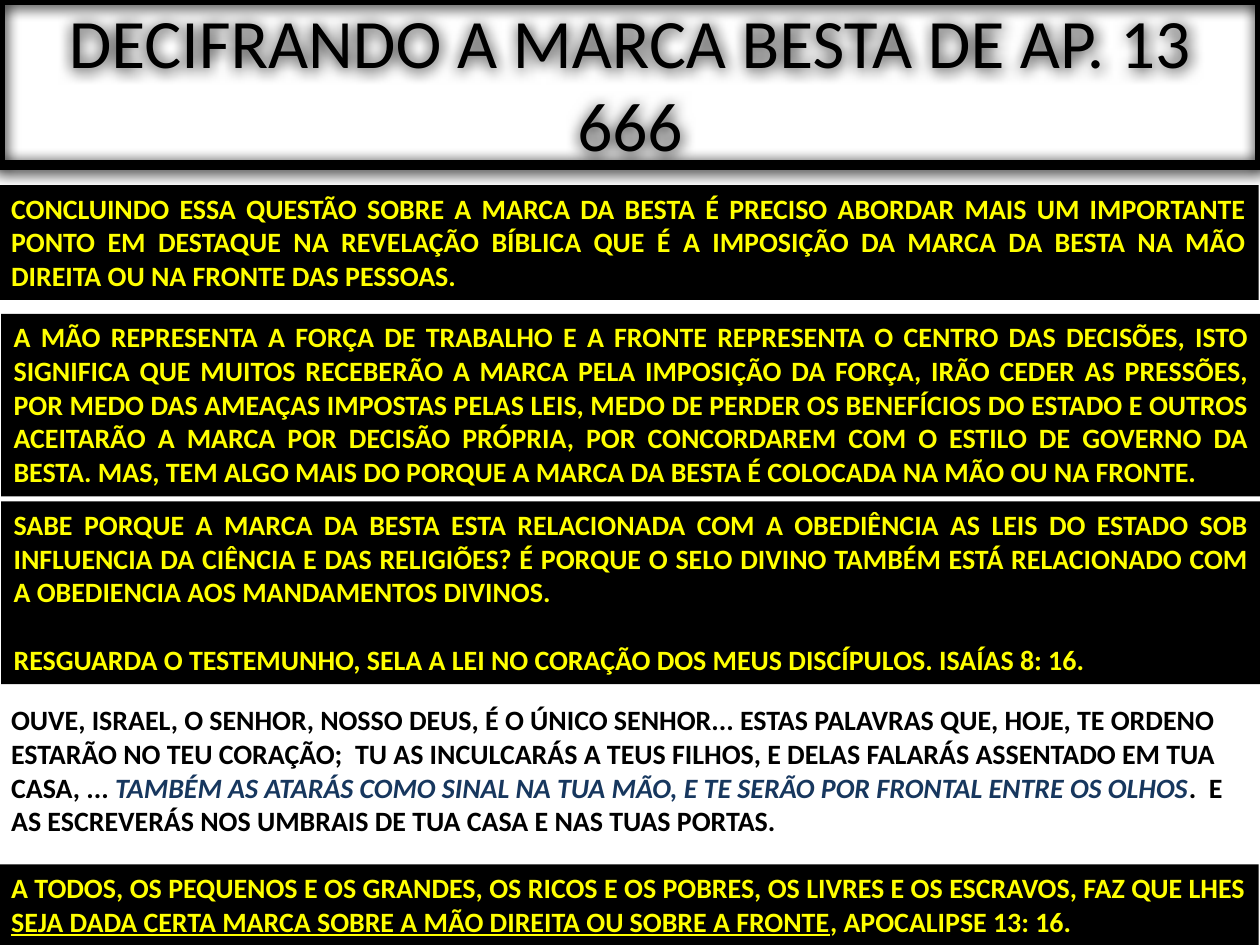
from lxml import etree
from pptx import Presentation
from pptx.dml.color import RGBColor
from pptx.enum.text import MSO_ANCHOR, MSO_AUTO_SIZE, PP_ALIGN
from pptx.oxml.ns import qn
from pptx.util import Inches, Pt

BLACK = RGBColor(0x00, 0x00, 0x00)
WHITE = RGBColor(0xFF, 0xFF, 0xFF)
YELLOW = RGBColor(0xFF, 0xFF, 0x00)
NAVY = RGBColor(0x17, 0x37, 0x5E)

# Content: a panel is a list of paragraphs, a paragraph a list of (text, format)
TITLE = "DECIFRANDO A MARCA BESTA DE AP. 13 666"
INTRO = [[("CONCLUINDO ESSA QUESTÃO SOBRE A MARCA DA BESTA É PRECISO ABORDAR MAIS UM "
           "IMPORTANTE PONTO EM DESTAQUE NA REVELAÇÃO BÍBLICA QUE É A IMPOSIÇÃO DA MARCA "
           "DA BESTA NA MÃO DIREITA OU NA FRONTE DAS PESSOAS.", {})]]
HAND = [[("A MÃO REPRESENTA A FORÇA DE TRABALHO E A FRONTE REPRESENTA O CENTRO DAS "
          "DECISÕES, ISTO SIGNIFICA QUE MUITOS RECEBERÃO A MARCA PELA IMPOSIÇÃO DA FORÇA, "
          "IRÃO CEDER AS PRESSÕES, POR MEDO DAS AMEAÇAS IMPOSTAS PELAS LEIS, MEDO DE "
          "PERDER OS BENEFÍCIOS DO ESTADO E OUTROS ACEITARÃO A MARCA POR DECISÃO PRÓPRIA, "
          "POR CONCORDAREM COM O ESTILO DE GOVERNO DA BESTA. MAS, TEM ALGO MAIS DO PORQUE "
          "A MARCA DA BESTA É COLOCADA NA MÃO OU NA FRONTE.", {})]]
SEAL = [[("SABE PORQUE A MARCA DA BESTA ESTA RELACIONADA COM A OBEDIÊNCIA AS LEIS DO "
          "ESTADO SOB INFLUENCIA DA CIÊNCIA E DAS RELIGIÕES? É PORQUE O SELO DIVINO TAMBÉM "
          "ESTÁ RELACIONADO COM A OBEDIENCIA AOS MANDAMENTOS DIVINOS.", {})],
        [("RESGUARDA O TESTEMUNHO, SELA A LEI NO CORAÇÃO DOS MEUS DISCÍPULOS. "
          "ISAÍAS 8: 16.", {})]]
HEAR = [[("OUVE, ISRAEL, O SENHOR, NOSSO DEUS, É O ÚNICO SENHOR... ESTAS PALAVRAS QUE, "
          "HOJE, TE ORDENO ESTARÃO NO TEU CORAÇÃO;  TU AS INCULCARÁS A TEUS FILHOS, E "
          "DELAS FALARÁS ASSENTADO EM TUA CASA, ... ", {}),
         ("TAMBÉM AS ATARÁS COMO SINAL NA TUA MÃO, E TE SERÃO POR FRONTAL ENTRE OS OLHOS",
          {"italic": True, "color": NAVY}),
         (".  E AS ESCREVERÁS NOS UMBRAIS DE TUA CASA E NAS TUAS PORTAS.", {})]]
MARK = [[("A TODOS, OS PEQUENOS E OS GRANDES, OS RICOS E OS POBRES, OS LIVRES E OS "
          "ESCRAVOS, FAZ QUE LHES ", {}),
         ("SEJA DADA CERTA MARCA SOBRE A MÃO DIREITA OU SOBRE A FRONTE",
          {"underline": True}),
         (", APOCALIPSE 13: 16.", {})]]

# Panel looks: fill, text colour, alignment
DARK = (BLACK, YELLOW, PP_ALIGN.JUSTIFY)
LIGHT = (WHITE, BLACK, PP_ALIGN.LEFT)

# Left, top, height, look, content
PANELS = [
    (-0.01, 1.47, 0.91, DARK, INTRO),
    (0.01, 2.49, 1.45, DARK, HAND),
    (0.01, 3.98, 1.45, DARK, SEAL),
    (-0.01, 6.86, 0.64, DARK, MARK),
    (-0.01, 5.53, 1.18, LIGHT, HEAR),
]
BODY = {"name": "Calibri", "size": Pt(16), "bold": True}
HEAD = {"name": "Calibri", "size": Pt(39.6), "color": BLACK}
GAP = Pt(19.5)  # one line of body text


def add_box(slide, left, top, width, height):
    box = slide.shapes.add_textbox(*map(Inches, (left, top, width, height)))
    box.text_frame.word_wrap = True
    return box


def add_run(para, text, style):
    run = para.add_run()
    run.text = text
    for key, value in style.items():
        if key == "color":
            run.font.color.rgb = value
        else:
            setattr(run.font, key, value)


def add_shadow(shape, blur, dist, angle):
    effects = etree.SubElement(shape._element.spPr, qn("a:effectLst"))
    outer = etree.SubElement(effects, qn("a:outerShdw"), blurRad=str(Pt(blur)),
                             dist=str(Pt(dist)), dir=str(angle * 60000),
                             algn="t", rotWithShape="0")
    etree.SubElement(outer, qn("a:srgbClr"), val=str(BLACK))


def add_title(slide):
    box = add_box(slide, 0, 0, 10, 1.31)
    box.line.color.rgb = BLACK
    box.line.width = Pt(6)
    add_shadow(box, 8.5, 1, 90)
    box.text_frame.vertical_anchor = MSO_ANCHOR.MIDDLE
    para = box.text_frame.paragraphs[0]
    para.alignment = PP_ALIGN.CENTER
    add_run(para, TITLE, HEAD)


def add_panel(slide, left, top, height, look, content):
    fill, color, align = look
    box = add_box(slide, left, top, 10, height)
    box.fill.solid()
    box.fill.fore_color.rgb = fill
    frame = box.text_frame
    frame.auto_size = MSO_AUTO_SIZE.SHAPE_TO_FIT_TEXT
    for i, runs in enumerate(content):
        para = frame.add_paragraph() if i else frame.paragraphs[0]
        para.alignment = align
        if i:
            para.space_before = GAP
        for text, extra in runs:
            add_run(para, text, {**BODY, "color": color, **extra})


def main():
    deck = Presentation()
    deck.slide_width, deck.slide_height = Inches(10), Inches(7.5)
    slide = deck.slides.add_slide(deck.slide_layouts[6])
    add_title(slide)
    for panel in PANELS:
        add_panel(slide, *panel)
    deck.save("out.pptx")


if __name__ == "__main__":
    main()
